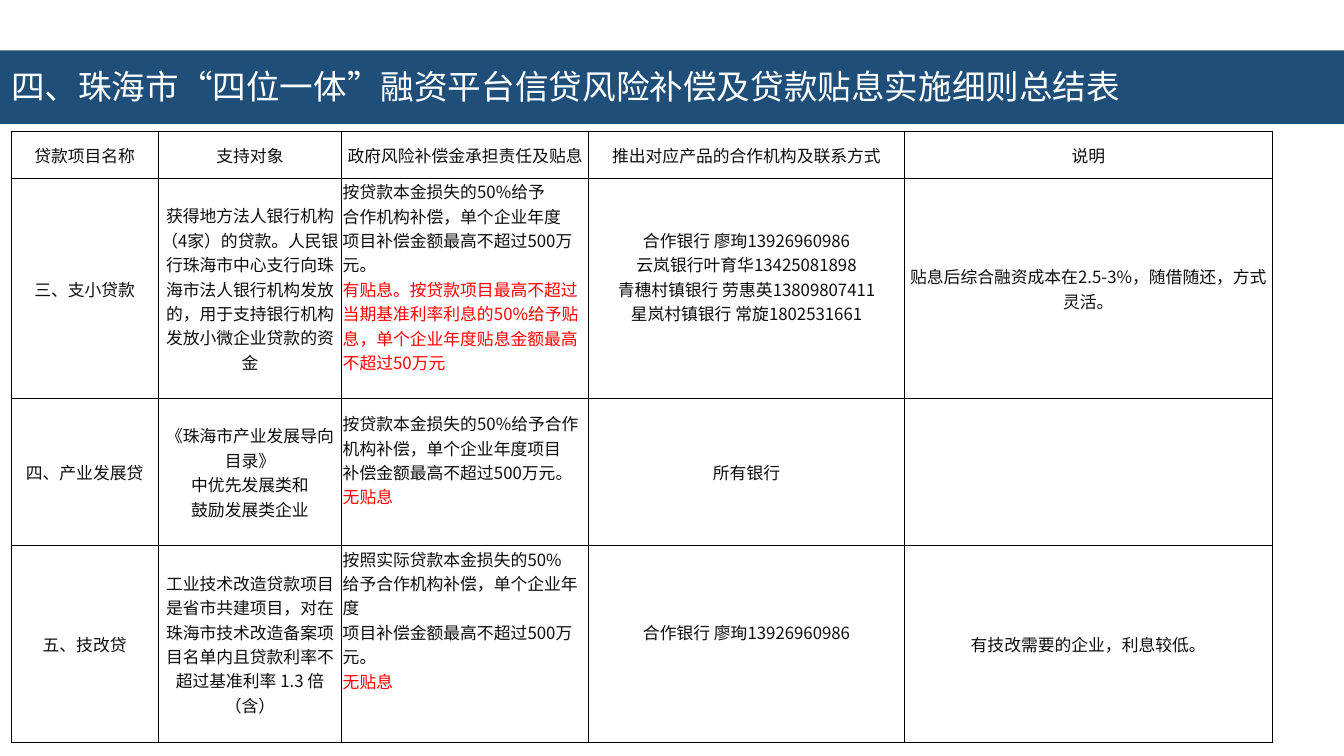
from dataclasses import dataclass

from pptx import Presentation
from pptx import util as u
from pptx.dml.color import RGBColor
from pptx.enum import shapes, text
from pptx.oxml.ns import qn
from lxml import etree


@dataclass(frozen=True)
class Theme:
    font: str = "Noto Sans CJK SC"
    banner: str = "1F4E79"
    title: str = "FFFFFF"
    body: str = "0D0D0D"
    accent: str = "FF0000"
    border: str = "000000"
    title_size: float = 24
    body_size: float = 12
    border_width: float = 0.5


THEME = Theme()
SLIDE_WIDTH, SLIDE_HEIGHT = 13.33, 7.5
MARGIN = 0.11
LINE_HEIGHT = 0.24

COLUMN_WIDTHS = [1.46, 1.82, 2.45, 3.13, 3.65]
ROW_HEIGHTS = [0.47, 2.18, 1.46, 1.95]
TERMS_COLUMN = 2  # left-aligned, with the interest subsidy in the accent colour

HEADERS = ["贷款项目名称", "支持对象", "政府风险补偿金承担责任及贴息",
           "推出对应产品的合作机构及联系方式", "说明"]
LOANS = [
    ["三、支小贷款",
     "获得地方法人银行机构（4家）的贷款。人民银行珠海市中心支行向珠海市法人银行机构发放的，"
     "用于支持银行机构发放小微企业贷款的资金",
     "按贷款本金损失的50%给予\n合作机构补偿，单个企业年度\n项目补偿金额最高不超过500万元。\n"
     "有贴息。按贷款项目最高不超过当期基准利率利息的50%给予贴息，单个企业年度贴息金额最高不超过50万元",
     "合作银行 廖珣13926960986\n云岚银行叶育华13425081898\n"
     "青穗村镇银行 劳惠英13809807411\n星岚村镇银行 常旋1802531661",
     "贴息后综合融资成本在2.5-3%，随借随还，方式灵活。"],
    ["四、产业发展贷",
     "《珠海市产业发展导向目录》\n中优先发展类和\n鼓励发展类企业",
     "按贷款本金损失的50%给予合作\n机构补偿，单个企业年度项目\n补偿金额最高不超过500万元。\n无贴息",
     "所有银行",
     ""],
    ["五、技改贷",
     "工业技术改造贷款项目是省市共建项目，对在珠海市技术改造备案项目名单内且贷款利率不超过基准利率 1.3 倍（含）",
     "按照实际贷款本金损失的50%\n给予合作机构补偿，单个企业年度\n项目补偿金额最高不超过500万元。\n无贴息",
     "合作银行 廖珣13926960986",
     "有技改需要的企业，利息较低。"],
]
# Lines of free space kept below the text, by (row, column)
LINES_BELOW = {(1, 2): 1, (1, 3): 1, (2, 2): 1, (3, 2): 2, (3, 3): 1}


def style_paragraph(paragraph, size, color):
    for run in paragraph.runs:
        run.font.size = u.Pt(size)
        run.font.name = THEME.font
        run.font.color.rgb = RGBColor.from_string(color)
        properties = run.font._element
        east_asian = etree.Element(qn("a:ea"), typeface=THEME.font)
        properties.find(qn("a:latin")).addnext(east_asian)


def add_borders(cell):
    properties = cell._tc.get_or_add_tcPr()
    for index, side in enumerate(("lnL", "lnR", "lnT", "lnB")):
        line = etree.Element(qn(f"a:{side}"), w=str(u.Pt(THEME.border_width)))
        fill = etree.SubElement(line, qn("a:solidFill"))
        etree.SubElement(fill, qn("a:srgbClr"), val=THEME.border)
        properties.insert(index, line)


def add_banner(slide, left, top, width, height):
    # Coloured band
    band = slide.shapes.add_shape(shapes.MSO_SHAPE.RECTANGLE, u.Inches(left),
                                  u.Inches(top), u.Inches(width), u.Inches(height))
    band.shadow.inherit = False
    band.fill.solid()
    band.fill.fore_color.rgb = RGBColor.from_string(THEME.banner)
    band.line.fill.background()

    # Title
    title = slide.shapes.add_textbox(u.Inches(left + MARGIN), u.Inches(top + 0.15),
                                     u.Inches(width * 0.9), u.Inches(0.4))
    frame = title.text_frame
    frame.word_wrap = True
    frame.margin_left = frame.margin_right = frame.margin_top = frame.margin_bottom = 0
    frame.text = "四、珠海市“四位一体”融资平台信贷风险补偿及贷款贴息实施细则总结表"
    style_paragraph(frame.paragraphs[0], THEME.title_size, THEME.title)


def fill_cell(cell, content, is_terms, lines_below):
    cell.fill.background()
    cell.vertical_anchor = text.MSO_ANCHOR.MIDDLE
    cell.margin_left = cell.margin_right = cell.margin_top = u.Inches(0.01)
    cell.margin_bottom = u.Inches(lines_below * LINE_HEIGHT)
    cell.text_frame.text = content
    paragraphs = cell.text_frame.paragraphs
    for paragraph in paragraphs:
        paragraph.alignment = text.PP_ALIGN.LEFT if is_terms else text.PP_ALIGN.CENTER
        style_paragraph(paragraph, THEME.body_size, THEME.body)
    if is_terms:
        for run in paragraphs[-1].runs:
            run.font.color.rgb = RGBColor.from_string(THEME.accent)
    add_borders(cell)


def add_loan_table(slide, left, top):
    rows = [HEADERS] + LOANS
    frame = slide.shapes.add_table(len(rows), len(HEADERS), u.Inches(left), u.Inches(top),
                                   u.Inches(sum(COLUMN_WIDTHS)), u.Inches(sum(ROW_HEIGHTS)))
    table = frame.table
    table.first_row = table.horz_banding = False
    for column, width in zip(table.columns, COLUMN_WIDTHS):
        column.width = u.Inches(width)
    for row, height in zip(table.rows, ROW_HEIGHTS):
        row.height = u.Inches(height)
    for r, contents in enumerate(rows):
        for c, content in enumerate(contents):
            is_terms = r > 0 and c == TERMS_COLUMN
            fill_cell(table.cell(r, c), content, is_terms, LINES_BELOW.get((r, c), 0))


def main():
    presentation = Presentation()
    presentation.slide_width = u.Inches(SLIDE_WIDTH)
    presentation.slide_height = u.Inches(SLIDE_HEIGHT)
    slide = presentation.slides.add_slide(presentation.slide_layouts[6])
    add_banner(slide, 0, 0.5, SLIDE_WIDTH, 0.73)
    add_loan_table(slide, MARGIN, 1.3)
    presentation.save("out.pptx")


if __name__ == "__main__":
    main()
